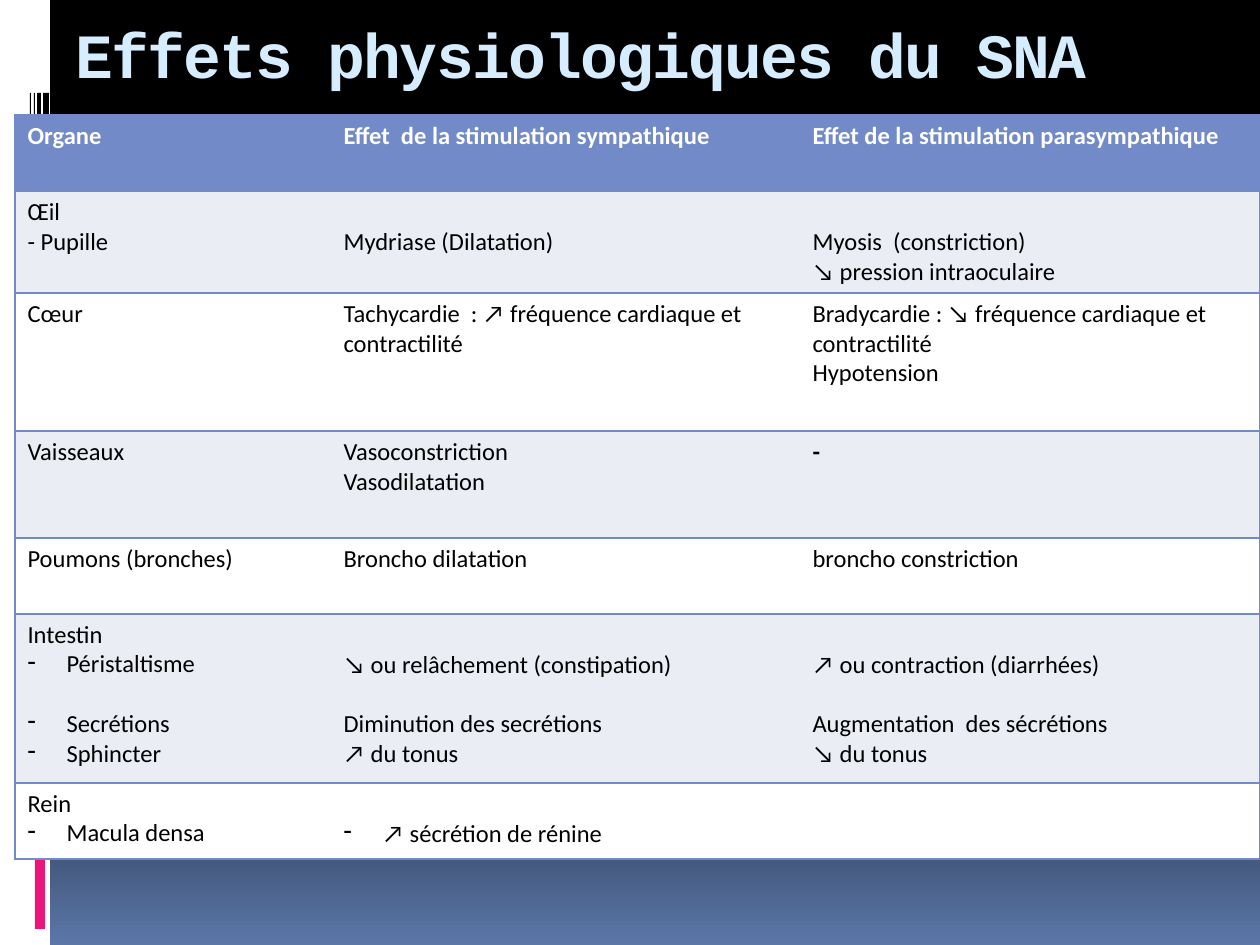
from dataclasses import dataclass

from lxml.etree import SubElement
from pptx import Presentation
from pptx.dml.color import RGBColor
from pptx.enum.shapes import MSO_SHAPE as Shape
from pptx.enum.text import MSO_ANCHOR as Anchor, PP_ALIGN as Align
from pptx.oxml.ns import qn
from pptx.util import Pt

EMU_PER_PX = 914400 / 126
LINE_PT = 17  # height of one table text line
LINE_PX = 30
HANG = 39
CELL_TOP = 6
NO_STYLE = "{2D5ABB26-0587-4C30-8999-92F81FD0307C}"
COLORS = {
    "black": "000000", "white": "FFFFFF", "slate": "5B77A8", "pink": "EA157A",
    "title": "D6ECFF", "blue": "738AC8", "band": "EBEDF5",
}


@dataclass
class Bar:
    left: int
    top: int
    width: int
    height: int
    color: str


@dataclass
class Line:
    text: str
    bullet: bool = False
    bold: bool = False
    gap: int = 0  # empty lines above


@dataclass
class Row:
    height: int
    cells: list[list[Line]]


def px(value: int) -> int:
    return round(value * EMU_PER_PX)


def rgb(name: str) -> RGBColor:
    return RGBColor.from_string(COLORS[name])


def write(para, text: str, *, font="Calibri", size=14, color="black", bold=False, spacing=0):
    para.alignment = Align.LEFT
    span = para.add_run()
    span.text = text
    span.font.name = font
    span.font.size = Pt(size)
    span.font.bold = bold
    span.font.color.rgb = rgb(color)
    if spacing:
        span.font._element.set("spc", str(spacing))


def draw_bar(page, bar: Bar) -> None:
    box = page.shapes.add_shape(
        Shape.RECTANGLE, px(bar.left), px(bar.top), px(bar.width), px(bar.height))
    box.shadow.inherit = False
    box.fill.solid()
    box.fill.fore_color.rgb = rgb(bar.color)
    box.line.fill.background()


def add_dash(para) -> None:
    props = para._p.get_or_add_pPr()
    props.set("marL", str(px(HANG)))
    props.set("indent", str(-px(HANG)))
    SubElement(props, qn("a:buChar")).set("char", "-")


def set_borders(cell, sides: str) -> None:
    props = cell._tc.get_or_add_tcPr()
    for side in "LRTB":
        edge = SubElement(props, qn(f"a:ln{side}"))
        if side in sides:
            edge.set("w", str(Pt(1)))
            fill = SubElement(edge, qn("a:solidFill"))
            SubElement(fill, qn("a:srgbClr")).set("val", COLORS["blue"])
        else:
            edge.set("w", "0")
            SubElement(edge, qn("a:noFill"))


def fill_cell(cell, lines: list[Line], color: str, text_color: str, sides: str) -> None:
    set_borders(cell, sides)
    cell.fill.solid()
    cell.fill.fore_color.rgb = rgb(color)
    frame = cell.text_frame
    for index, line in enumerate(lines):
        para = frame.add_paragraph() if index else frame.paragraphs[0]
        if line.bullet:
            add_dash(para)
        if index:
            para.space_before = Pt(line.gap * LINE_PT)
        else:
            cell.margin_top = px(CELL_TOP + line.gap * LINE_PX)
        write(para, line.text, color=text_color, bold=line.bold)


def draw_table(page, left: int, top: int, widths: list[int], rows: list[Row]) -> None:
    frame = page.shapes.add_table(
        len(rows), len(widths), px(left), px(top),
        px(sum(widths)), px(sum(row.height for row in rows)))
    table = frame.table
    table.first_row = table.horz_banding = False
    table._tbl.tblPr.find(qn("a:tableStyleId")).text = NO_STYLE
    for column, width in zip(table.columns, widths):
        column.width = px(width)
    for r, row in enumerate(rows):
        table.rows[r].height = px(row.height)
        color = "blue" if r == 0 else "band" if r % 2 else "white"
        for c, lines in enumerate(row.cells):
            sides = "TB" + ("L" if c == 0 else "") + ("R" if c == len(widths) - 1 else "")
            fill_cell(table.cell(r, c), lines, color, "black" if r else "white", sides)


BARS = [
    Bar(0, 0, 50, 945, "white"),
    Bar(35, 696, 10, 233, "pink"),
    Bar(43, 93, 6, 50, "black"),
    Bar(37, 93, 4, 50, "black"),
    Bar(34, 93, 1, 50, "black"),
    Bar(30, 93, 1, 50, "black"),
]

ROWS = [
    Row(76, [
        [Line("Organe", bold=True)],
        [Line("Effet  de la stimulation sympathique", bold=True)],
        [Line("Effet de la stimulation parasympathique", bold=True)]]),
    Row(102, [
        [Line("Œil"), Line("- Pupille")],
        [Line("Mydriase (Dilatation)", gap=1)],
        [Line("Myosis  (constriction)", gap=1), Line("↘ pression intraoculaire")]]),
    Row(138, [
        [Line("Cœur")],
        [Line("Tachycardie  : ↗ fréquence cardiaque et contractilité")],
        [Line("Bradycardie : ↘ fréquence cardiaque et contractilité"), Line("Hypotension")]]),
    Row(107, [
        [Line("Vaisseaux")],
        [Line("Vasoconstriction"), Line("Vasodilatation")],
        [Line("-", bold=True)]]),
    Row(76, [
        [Line("Poumons (bronches)")],
        [Line("Broncho dilatation")],
        [Line("broncho constriction")]]),
    Row(169, [
        [Line("Intestin"), Line("Péristaltisme", bullet=True),
         Line("Secrétions", bullet=True, gap=1), Line("Sphincter", bullet=True)],
        [Line("↘ ou relâchement (constipation)", gap=1),
         Line("Diminution des secrétions", gap=1), Line("↗ du tonus")],
        [Line("↗ ou contraction (diarrhées)", gap=1),
         Line("Augmentation  des sécrétions", gap=1), Line("↘ du tonus")]]),
    Row(76, [
        [Line("Rein"), Line("Macula densa", bullet=True)],
        [Line("↗ sécrétion de rénine", bullet=True, gap=1)],
        []]),
]


def main() -> None:
    deck = Presentation()
    deck.slide_width, deck.slide_height = px(1260), px(945)
    page = deck.slides.add_slide(deck.slide_layouts[5])

    # Background: black down to 65 %, then fading to slate
    backdrop = page.background.fill
    backdrop.gradient()
    backdrop.gradient_angle = 270
    for stop, position, name in zip(backdrop.gradient_stops, (0.65, 1), ("black", "slate")):
        stop.position = position
        stop.color.rgb = rgb(name)

    # Side decoration
    for bar in BARS:
        draw_bar(page, bar)

    # Title
    title = page.shapes.title
    title.left, title.top, title.width, title.height = px(63), px(2), px(1134), px(102)
    title.text_frame.vertical_anchor = Anchor.MIDDLE
    write(title.text_frame.paragraphs[0], "Effets physiologiques du SNA",
          font="Courier New", size=36, color="title", bold=True, spacing=-100)

    # Table of effects
    draw_table(page, 15, 115, [316, 469, 460], ROWS)

    deck.save("out.pptx")


if __name__ == "__main__":
    main()
